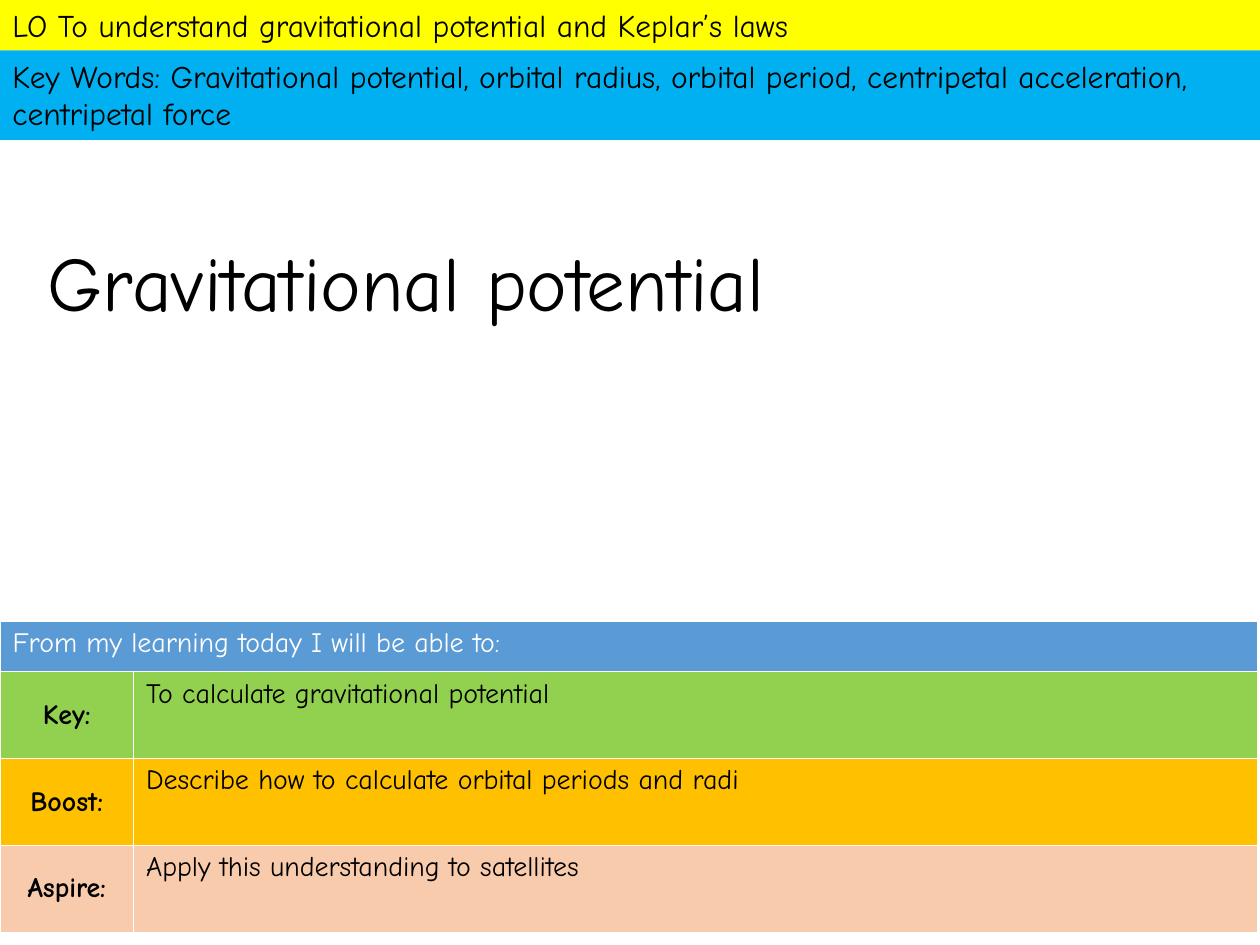
"""Build the lesson slide on gravitational potential."""
from pptx import Presentation
from pptx.dml.color import RGBColor
from pptx.enum import shapes, text
from pptx.util import Inches, Pt

BLACK = RGBColor(0x00, 0x00, 0x00)
WHITE = RGBColor(0xFF, 0xFF, 0xFF)
YELLOW = RGBColor(0xFF, 0xFF, 0x00)
SKY = RGBColor(0x00, 0xB0, 0xF0)
BLUE = RGBColor(0x5B, 0x9B, 0xD5)
GREEN = RGBColor(0x92, 0xD0, 0x50)
AMBER = RGBColor(0xFF, 0xC0, 0x00)
PEACH = RGBColor(0xF8, 0xCB, 0xAD)
LEFT, MID = text.PP_ALIGN.LEFT, text.PP_ALIGN.CENTER
TOP, CENTRE = text.MSO_ANCHOR.TOP, text.MSO_ANCHOR.MIDDLE


def write(frame, words, size=16, color=BLACK, bold=False, align=LEFT):
    frame.word_wrap = True
    para = frame.paragraphs[0]
    para.alignment = align
    run = para.add_run()
    run.text = words
    font = run.font
    font.name = "Comic Neue"
    font.size = Pt(size)
    font.bold = bold
    font.color.rgb = color


def paint(item, color):
    item.fill.solid()
    item.fill.fore_color.rgb = color


deck = Presentation()
deck.slide_width = Inches(10)
deck.slide_height = Inches(7.5)
slide = deck.slides.add_slide(deck.slide_layouts[5])

bands = [
    (0, 0.4, YELLOW, "LO To understand gravitational potential and Keplar’s laws"),
    (0.4, 0.71, SKY, "Key Words: Gravitational potential, orbital radius, orbital period, "
                     "centripetal acceleration, centripetal force"),
]
for top, high, color, words in bands:
    band = slide.shapes.add_shape(shapes.MSO_SHAPE.RECTANGLE, 0, Inches(top),
                                  Inches(10), Inches(high))
    band.shadow.inherit = False
    paint(band, color)
    band.line.fill.background()
    band.text_frame.vertical_anchor = TOP
    write(band.text_frame, words, size=18)

title = slide.shapes.title
title.left, title.top = Inches(0.28), Inches(1.55)
title.width, title.height = Inches(8.62), Inches(1.45)
title.text_frame.auto_size = text.MSO_AUTO_SIZE.NONE
title.text_frame.vertical_anchor = CENTRE
write(title.text_frame, "Gravitational potential", size=44)
title.text_frame.paragraphs[0].line_spacing = 0.9

goals = [
    ("Key:", "To calculate gravitational potential", GREEN),
    ("Boost:", "Describe how to calculate orbital periods and radi", AMBER),
    ("Aspire:", "Apply this understanding to satellites", PEACH),
]
table = slide.shapes.add_table(len(goals) + 1, 2, 0, Inches(4.93),
                               Inches(9.98), Inches(2.47)).table
table.columns[0].width = Inches(1.06)
table.columns[1].width = Inches(8.92)
table.rows[0].height = Inches(0.4)
head = table.cell(0, 0)
head.merge(table.cell(0, 1))
paint(head, BLUE)
write(head.text_frame, "From my learning today I will be able to:", color=WHITE)

for row, (level, goal, color) in enumerate(goals, 1):
    table.rows[row].height = Inches(0.69)
    label, aim = table.cell(row, 0), table.cell(row, 1)
    paint(label, color)
    paint(aim, color)
    label.vertical_anchor = CENTRE
    write(label.text_frame, level, bold=True, align=MID)
    write(aim.text_frame, goal)

deck.save("out.pptx")
